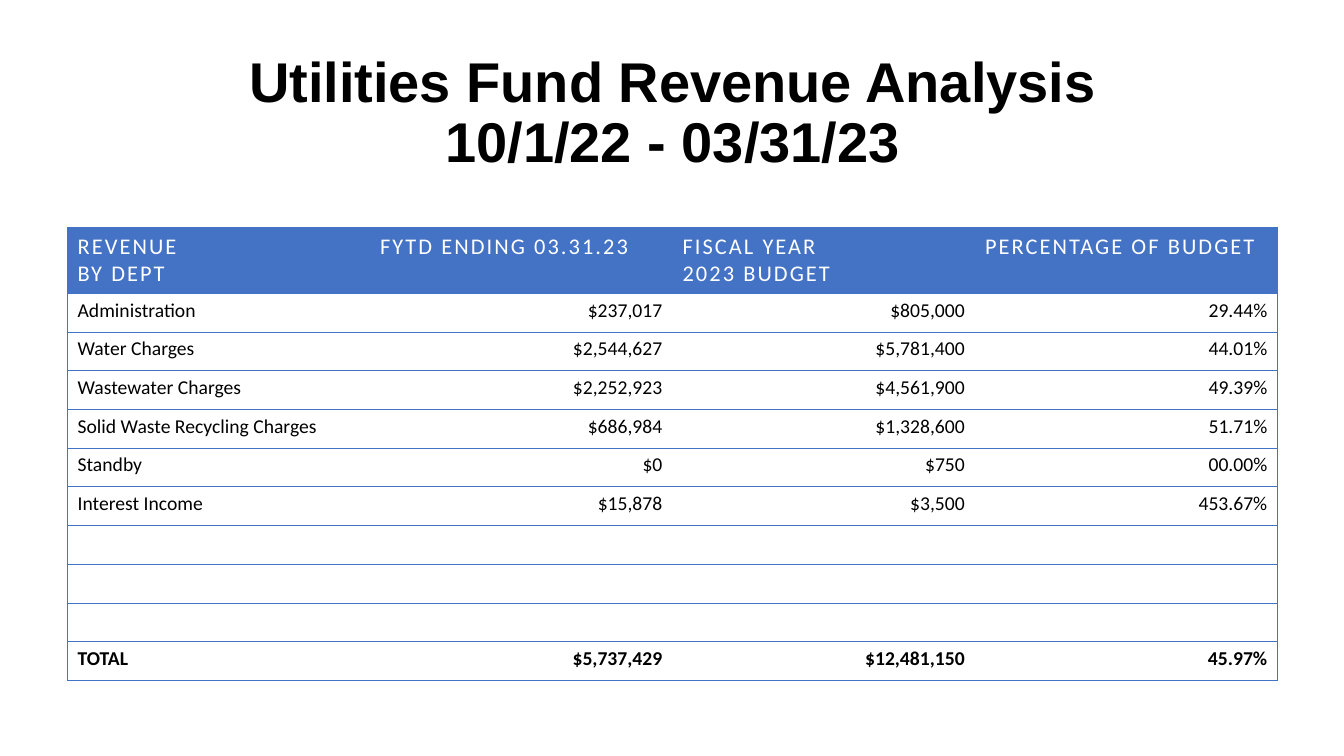
import pptx
import pptx.util
import pptx.dml.color
import pptx.enum.text
import pptx.oxml.ns
from lxml import etree

WIDTH, HEIGHT = 13.33, 7.5
MARGIN = 0.67
TABLE_WIDTH = 12
HEADER_HEIGHT, ROW_HEIGHT = 0.65, 0.384
BLUE, WHITE, BLACK = "4472C4", "FFFFFF", "000000"
EMPTY_ROW = ("", "", "", "")
REVENUE = [
    ("REVENUE\nBY DEPT", "FYTD ENDING 03.31.23", "FISCAL YEAR\n2023 BUDGET", "PERCENTAGE OF BUDGET"),
    ("Administration", "$237,017", "$805,000", "29.44%"),
    ("Water Charges", "$2,544,627", "$5,781,400", "44.01%"),
    ("Wastewater Charges", "$2,252,923", "$4,561,900", "49.39%"),
    ("Solid Waste Recycling Charges", "$686,984", "$1,328,600", "51.71%"),
    ("Standby", "$0", "$750", "00.00%"),
    ("Interest Income", "$15,878", "$3,500", "453.67%"),
    EMPTY_ROW,
    EMPTY_ROW,
    EMPTY_ROW,
    ("TOTAL", "$5,737,429", "$12,481,150", "45.97%"),
]


def inches(value):
    return pptx.util.Inches(value)


def color(value):
    return pptx.dml.color.RGBColor.from_string(value)


def format_run(r, font, size, fill, bold=False):
    r.font.name = font
    r.font.size = pptx.util.Pt(size)
    r.font.color.rgb = color(fill)
    r.font.bold = bold


def add_title(s, text):
    tb = s.shapes.add_textbox(inches(MARGIN), inches(0.34), inches(TABLE_WIDTH), inches(1.59))
    tf = tb.text_frame
    tf.word_wrap = True
    tf.vertical_anchor = pptx.enum.text.MSO_ANCHOR.MIDDLE
    p = tf.paragraphs[0]
    p.text = text
    p.alignment = pptx.enum.text.PP_ALIGN.CENTER
    p.line_spacing = 0.9
    for r in p.runs:
        format_run(r, "Arial", 40, BLACK, True)


def set_border(cell, side, visible):
    qn = pptx.oxml.ns.qn
    tcPr = cell._tc.get_or_add_tcPr()
    ln = etree.SubElement(tcPr, qn(f"a:ln{side}"), w=str(pptx.util.Pt(0.5)))
    if visible:
        fill = etree.SubElement(ln, qn("a:solidFill"))
        etree.SubElement(fill, qn("a:srgbClr"), val=BLUE)
    else:
        etree.SubElement(ln, qn("a:noFill"))


def fill_cell(cell, text, header, total, first, last):
    for side, visible in (("L", first), ("R", last), ("T", True), ("B", True)):
        set_border(cell, side, visible)
    cell.fill.solid()
    cell.fill.fore_color.rgb = color(BLUE if header else WHITE)
    tf = cell.text_frame
    tf.text = text
    size = 16 if header else 14
    for p in tf.paragraphs:
        if not header and not first:
            p.alignment = pptx.enum.text.PP_ALIGN.RIGHT
        for r in p.runs:
            format_run(r, "Calibri", size, WHITE if header else BLACK, total)
            if header:
                r._r.get_or_add_rPr().set("spc", "150")
        if not p.runs:
            etree.SubElement(p._p, pptx.oxml.ns.qn("a:endParaRPr"), sz=str(size * 100))


def add_revenue_table(s, rows):
    count, columns = len(rows), len(rows[0])
    height = HEADER_HEIGHT + ROW_HEIGHT * (count - 1)
    frame = s.shapes.add_table(
        count, columns, inches(MARGIN), inches(2.26), inches(TABLE_WIDTH), inches(height))
    table = frame.table
    table.first_row = table.horz_banding = False
    for column in table.columns:
        column.width = inches(TABLE_WIDTH / columns)
    for i, row in enumerate(rows):
        table.rows[i].height = inches(ROW_HEIGHT if i else HEADER_HEIGHT)
        for j, text in enumerate(row):
            fill_cell(table.cell(i, j), text, i == 0, i == count - 1, j == 0, j == columns - 1)


def main():
    prs = pptx.Presentation()
    prs.slide_width, prs.slide_height = inches(WIDTH), inches(HEIGHT)
    s = prs.slides.add_slide(prs.slide_layouts[6])
    add_title(s, "Utilities Fund Revenue Analysis\n10/1/22 - 03/31/23")
    add_revenue_table(s, REVENUE)
    prs.save("out.pptx")


if __name__ == "__main__":
    main()
